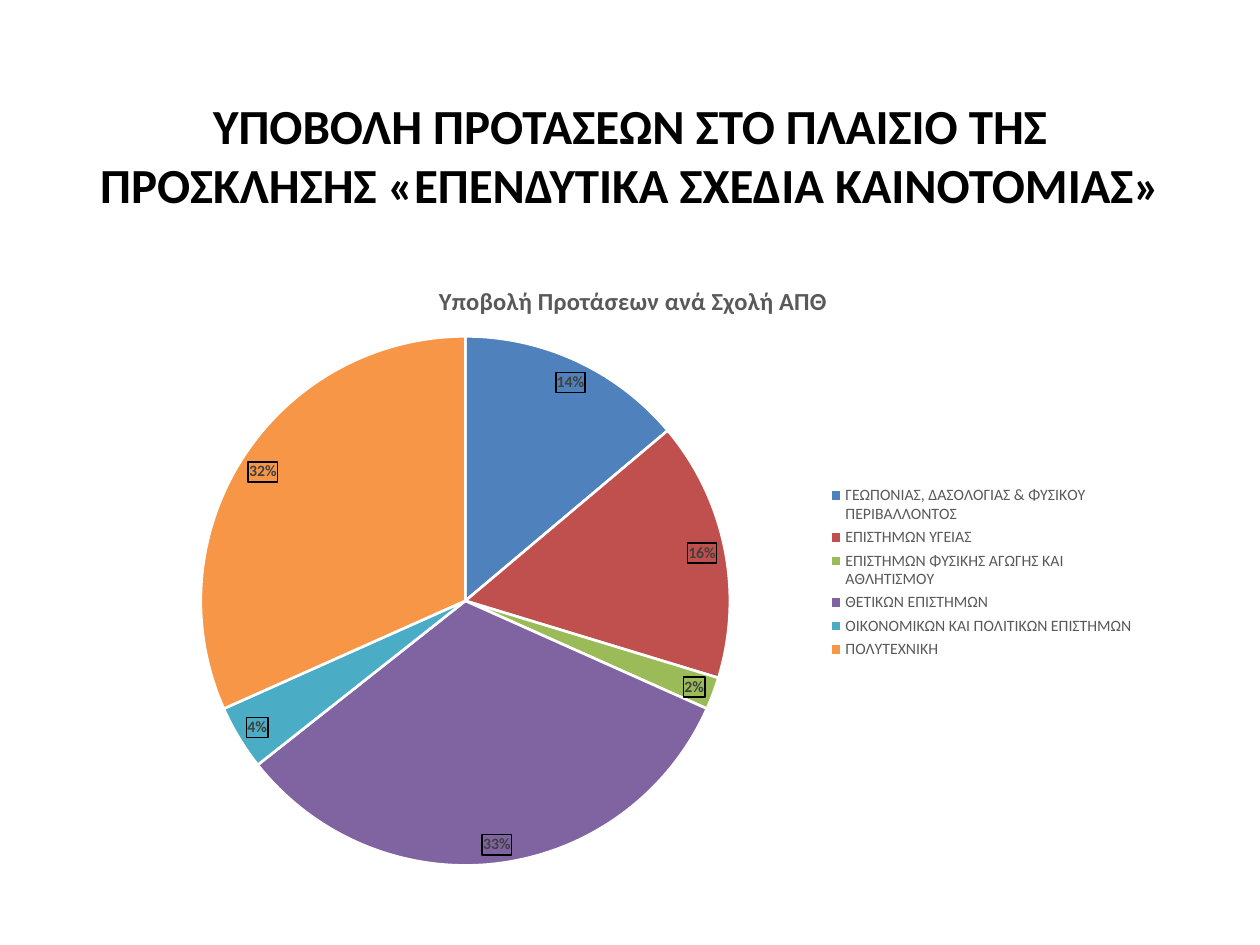
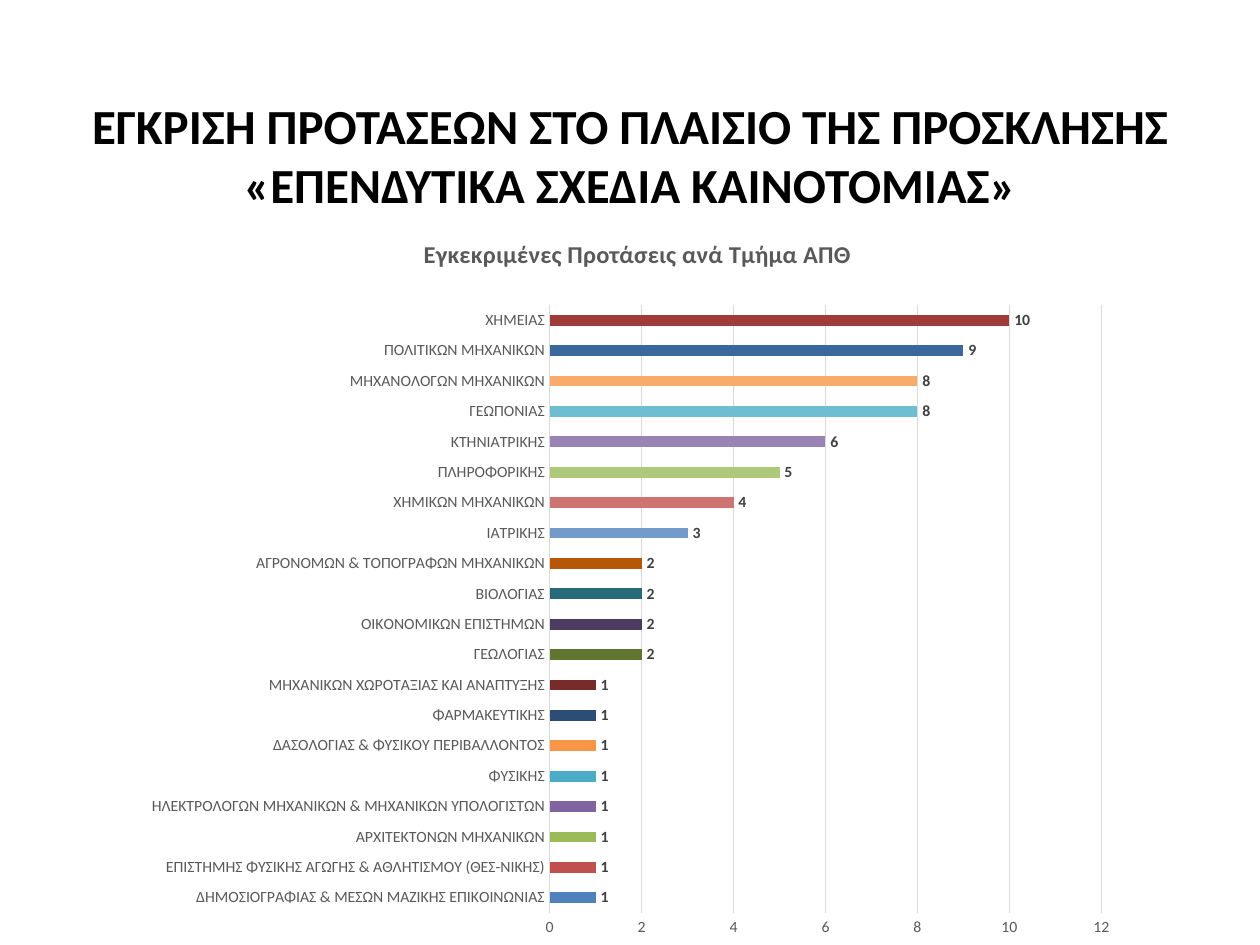
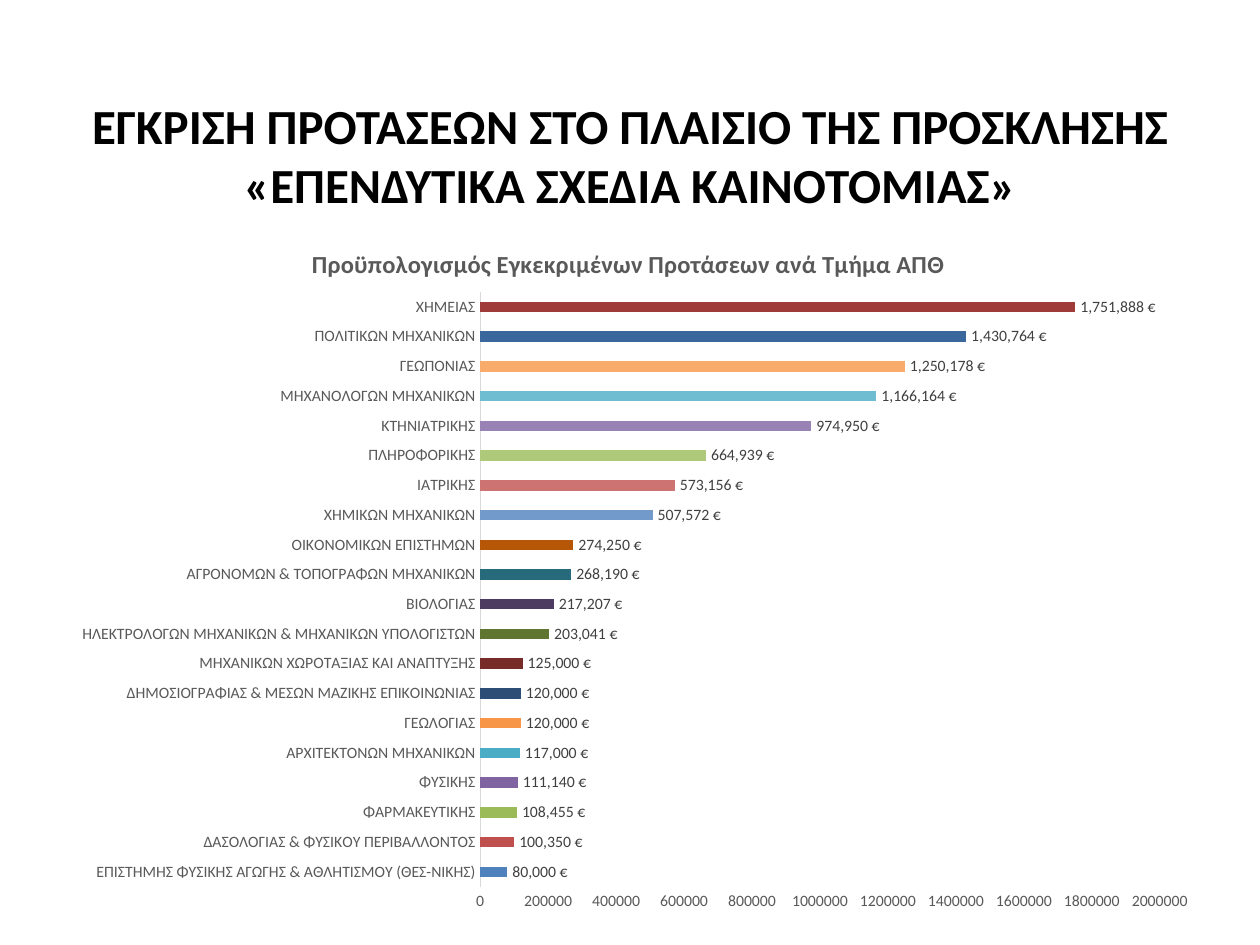
"""Build three slides on proposals and approvals per university unit."""
from lxml import etree
from pptx import Presentation
from pptx.chart.data import CategoryChartData
from pptx.dml.color import RGBColor
from pptx.enum import chart as ch
from pptx.enum import text as tx
from pptx.oxml import ns, parse_xml
from pptx.util import Cm, Pt

FACE = "Calibri"
BLACK, GREY, DARK, RULE, WHITE = "000000", "595959", "404040", "D9D9D9", "FFFFFF"
PALETTE = [
    "4F81BD", "C0504D", "9BBB59", "8064A2", "4BACC6", "F79646", "2C4D75",
    "772C2A", "5F7530", "4D3B62", "276A7C", "B65708", "729ACA", "CD7371",
    "AFC97A", "9983B5", "6FBDD1", "F9AB6B", "3A679C", "9F3B38",
]
CALL = "«ΕΠΕΝΔΥΤΙΚΑ ΣΧΕΔΙΑ ΚΑΙΝΟΤΟΜΙΑΣ»"
SUBMISSION = f"ΥΠΟΒΟΛΗ ΠΡΟΤΑΣΕΩΝ ΣΤΟ ΠΛΑΙΣΙΟ ΤΗΣ ΠΡΟΣΚΛΗΣΗΣ {CALL}"
APPROVAL = f"ΕΓΚΡΙΣΗ ΠΡΟΤΑΣΕΩΝ ΣΤΟ ΠΛΑΙΣΙΟ ΤΗΣ ΠΡΟΣΚΛΗΣΗΣ {CALL}"

SCHOOLS = [
    ("ΓΕΩΠΟΝΙΑΣ, ΔΑΣΟΛΟΓΙΑΣ & ΦΥΣΙΚΟΥ ΠΕΡΙΒΑΛΛΟΝΤΟΣ", 14),
    ("ΕΠΙΣΤΗΜΩΝ ΥΓΕΙΑΣ", 16),
    ("ΕΠΙΣΤΗΜΩΝ ΦΥΣΙΚΗΣ ΑΓΩΓΗΣ ΚΑΙ ΑΘΛΗΤΙΣΜΟΥ", 2),
    ("ΘΕΤΙΚΩΝ ΕΠΙΣΤΗΜΩΝ", 33),
    ("ΟΙΚΟΝΟΜΙΚΩΝ ΚΑΙ ΠΟΛΙΤΙΚΩΝ ΕΠΙΣΤΗΜΩΝ", 4),
    ("ΠΟΛΥΤΕΧΝΙΚΗ", 32),
]
DEPARTMENTS = [
    ("ΔΗΜΟΣΙΟΓΡΑΦΙΑΣ & ΜΕΣΩΝ ΜΑΖΙΚΗΣ ΕΠΙΚΟΙΝΩΝΙΑΣ", 1, 120000),
    ("ΕΠΙΣΤΗΜΗΣ ΦΥΣΙΚΗΣ ΑΓΩΓΗΣ & ΑΘΛΗΤΙΣΜΟΥ (ΘΕΣ-ΝΙΚΗΣ)", 1, 80000),
    ("ΑΡΧΙΤΕΚΤΟΝΩΝ ΜΗΧΑΝΙΚΩΝ", 1, 117000),
    ("ΗΛΕΚΤΡΟΛΟΓΩΝ ΜΗΧΑΝΙΚΩΝ & ΜΗΧΑΝΙΚΩΝ ΥΠΟΛΟΓΙΣΤΩΝ", 1, 203041),
    ("ΦΥΣΙΚΗΣ", 1, 111140),
    ("ΔΑΣΟΛΟΓΙΑΣ & ΦΥΣΙΚΟΥ ΠΕΡΙΒΑΛΛΟΝΤΟΣ", 1, 100350),
    ("ΦΑΡΜΑΚΕΥΤΙΚΗΣ", 1, 108455),
    ("ΜΗΧΑΝΙΚΩΝ ΧΩΡΟΤΑΞΙΑΣ ΚΑΙ ΑΝΑΠΤΥΞΗΣ", 1, 125000),
    ("ΓΕΩΛΟΓΙΑΣ", 2, 120000),
    ("ΟΙΚΟΝΟΜΙΚΩΝ ΕΠΙΣΤΗΜΩΝ", 2, 274250),
    ("ΒΙΟΛΟΓΙΑΣ", 2, 217207),
    ("ΑΓΡΟΝΟΜΩΝ & ΤΟΠΟΓΡΑΦΩΝ ΜΗΧΑΝΙΚΩΝ", 2, 268190),
    ("ΙΑΤΡΙΚΗΣ", 3, 573156),
    ("ΧΗΜΙΚΩΝ ΜΗΧΑΝΙΚΩΝ", 4, 507572),
    ("ΠΛΗΡΟΦΟΡΙΚΗΣ", 5, 664939),
    ("ΚΤΗΝΙΑΤΡΙΚΗΣ", 6, 974950),
    ("ΓΕΩΠΟΝΙΑΣ", 8, 1250178),
    ("ΜΗΧΑΝΟΛΟΓΩΝ ΜΗΧΑΝΙΚΩΝ", 8, 1166164),
    ("ΠΟΛΙΤΙΚΩΝ ΜΗΧΑΝΙΚΩΝ", 9, 1430764),
    ("ΧΗΜΕΙΑΣ", 10, 1751888),
]


def rgb(code):
    """Turn a hex string into a colour."""
    return RGBColor.from_string(code)


def style(font, size, color, bold=False):
    """Apply the shared typeface with a size, colour and weight."""
    font.name, font.size, font.bold = FACE, Pt(size), bold
    font.color.rgb = rgb(color)


def place(part, index, **fractions):
    """Give a chart part a fixed layout in fractions of the chart."""
    for old in part.findall(ns.qn("c:layout")):
        part.remove(old)
    layout = etree.Element(ns.qn("c:layout"))
    manual = etree.SubElement(layout, ns.qn("c:manualLayout"))
    settings = {"xMode": "edge", "yMode": "edge", **fractions}
    if part.tag == ns.qn("c:plotArea"):
        settings = {"layoutTarget": "inner", **settings}
    for key, setting in settings.items():
        etree.SubElement(manual, ns.qn(f"c:{key}")).set("val", str(setting))
    part.insert(index, layout)


def add_titled_slide(deck, heading):
    """Add a slide with its heading in the title placeholder."""
    slide = deck.slides.add_slide(deck.slide_layouts[5])
    title = slide.shapes.title
    title.left, title.top = Cm(1.27), Cm(1.52)
    title.width, title.height = Cm(22.86), Cm(3.18)
    title.text_frame.vertical_anchor = tx.MSO_ANCHOR.MIDDLE
    paragraph = title.text_frame.paragraphs[0]
    paragraph.alignment = tx.PP_ALIGN.CENTER
    run = paragraph.add_run()
    run.text = heading
    style(run.font, 28, BLACK, True)
    return slide


def add_chart(slide, kind, box, rows, caption, caption_at, plot_at):
    """Add a captioned chart with one colour per category."""
    data = CategoryChartData()
    data.categories = [name for name, _ in rows]
    data.add_series("Series 1", [amount for _, amount in rows])
    chart = slide.shapes.add_chart(kind, *map(Cm, box), data).chart
    style(chart.font, 10, BLACK)
    chart.has_legend = False
    chart.has_title = True
    run = chart.chart_title.text_frame.paragraphs[0].add_run()
    run.text = caption
    style(run.font, 14, GREY, True)
    place(chart.chart_title._element, 1, **dict(zip("xy", caption_at)))
    plot = chart.plots[0]
    place(plot._element.getparent(), 0, **dict(zip("xywh", plot_at)))
    for index, color in enumerate(PALETTE[:len(rows)]):
        fill = plot.series[0].points[index].format.fill
        fill.solid()
        fill.fore_color.rgb = rgb(color)
    return chart


def label_points(plot, position, number_format, bold):
    """Show data labels on a plot and return them."""
    plot.has_data_labels = True
    labels = plot.data_labels
    labels.position = position
    labels.number_format = number_format
    labels.number_format_is_linked = False
    style(labels.font, 9, DARK, bold)
    return labels


def add_pie(slide, rows, caption):
    """Add a pie chart with framed percentages and a legend."""
    chart = add_chart(slide, ch.XL_CHART_TYPE.PIE, (2.31, 5.13, 20.8, 12.7),
                      rows, caption, (0.31, 0.04), (0.08, 0.13, 0.52, 0.84))
    plot = chart.plots[0]
    plot.vary_by_categories = True
    for index in range(len(rows)):
        edge = plot.series[0].points[index].format.line
        edge.color.rgb, edge.width = rgb(WHITE), Pt(1.5)
    labels = label_points(plot, ch.XL_LABEL_POSITION.BEST_FIT, "0%", True)
    labels.show_percentage, labels.show_value = True, False
    frame = parse_xml(
        f'<c:spPr {ns.nsdecls("c", "a")}><a:noFill/><a:ln w="12700"><a:solidFill>'
        f'<a:srgbClr val="{BLACK}"/></a:solidFill></a:ln></c:spPr>')
    labels._element.find(ns.qn("c:txPr")).addprevious(frame)
    chart.has_legend = True
    chart.legend.position = ch.XL_LEGEND_POSITION.RIGHT
    chart.legend.include_in_layout = False
    style(chart.legend.font, 9, GREY)
    place(chart.legend._element, 1, x=0.69, y=0.36, w=0.3, h=0.29)


def add_bars(slide, box, rows, caption, caption_at, plot_at, number_format, step,
             top, bold=False):
    """Add a horizontal bar chart with labelled bars and return it."""
    chart = add_chart(slide, ch.XL_CHART_TYPE.BAR_CLUSTERED, box, rows, caption,
                      caption_at, plot_at)
    plot = chart.plots[0]
    plot.vary_by_categories = False
    plot.gap_width = 182
    labels = label_points(plot, ch.XL_LABEL_POSITION.OUTSIDE_END, number_format, bold)
    labels.show_value = True
    departments, scale = chart.category_axis, chart.value_axis
    for axis in (departments, scale):
        axis.major_tick_mark = axis.minor_tick_mark = ch.XL_TICK_MARK.NONE
        axis.has_major_gridlines = False
        style(axis.tick_labels.font, 9, GREY)
    departments.format.line.color.rgb = rgb(RULE)
    departments.format.line.width = Pt(0.75)
    scale.format.line.fill.background()
    scale.minimum_scale, scale.maximum_scale, scale.major_unit = 0, top, step
    scale.tick_labels.number_format = "General"
    scale.tick_labels.number_format_is_linked = False
    return chart


def main():
    """Build and save the deck."""
    deck = Presentation()
    deck.slide_width, deck.slide_height = Cm(25.4), Cm(19.05)

    add_pie(add_titled_slide(deck, SUBMISSION), SCHOOLS,
            "Υποβολή Προτάσεων ανά Σχολή ΑΠΘ")

    approved = [(name, count) for name, count, _ in DEPARTMENTS]
    counts = add_bars(
        add_titled_slide(deck, APPROVAL), (2.59, 4.11, 20.22, 14.76), approved,
        "Εγκεκριμένες Προτάσεις ανά Τμήμα ΑΠΘ", (0.29, 0.04),
        (0.42, 0.14, 0.55, 0.84), "General", 2, 12, bold=True)
    counts.category_axis.crosses = ch.XL_AXIS_CROSSES.MAXIMUM
    counts.value_axis.has_major_gridlines = True
    grid = counts.value_axis.major_gridlines.format.line
    grid.color.rgb, grid.width = rgb(RULE), Pt(0.75)

    budgets = sorted(((name, budget) for name, _, budget in DEPARTMENTS),
                     key=lambda row: (row[1], -len(row[0])))
    budgets[5:7] = sorted(budgets[5:7])
    add_bars(
        add_titled_slide(deck, APPROVAL), (1.09, 4.32, 23.22, 14.27), budgets,
        "Προϋπολογισμός Εγκεκριμένων Προτάσεων ανά Τμήμα ΑΠΘ", (0.22, 0.04),
        (0.37, 0.11, 0.59, 0.84), '#,##0\\ "€"', 200000, 2000000)

    deck.save("out.pptx")


if __name__ == "__main__":
    main()
